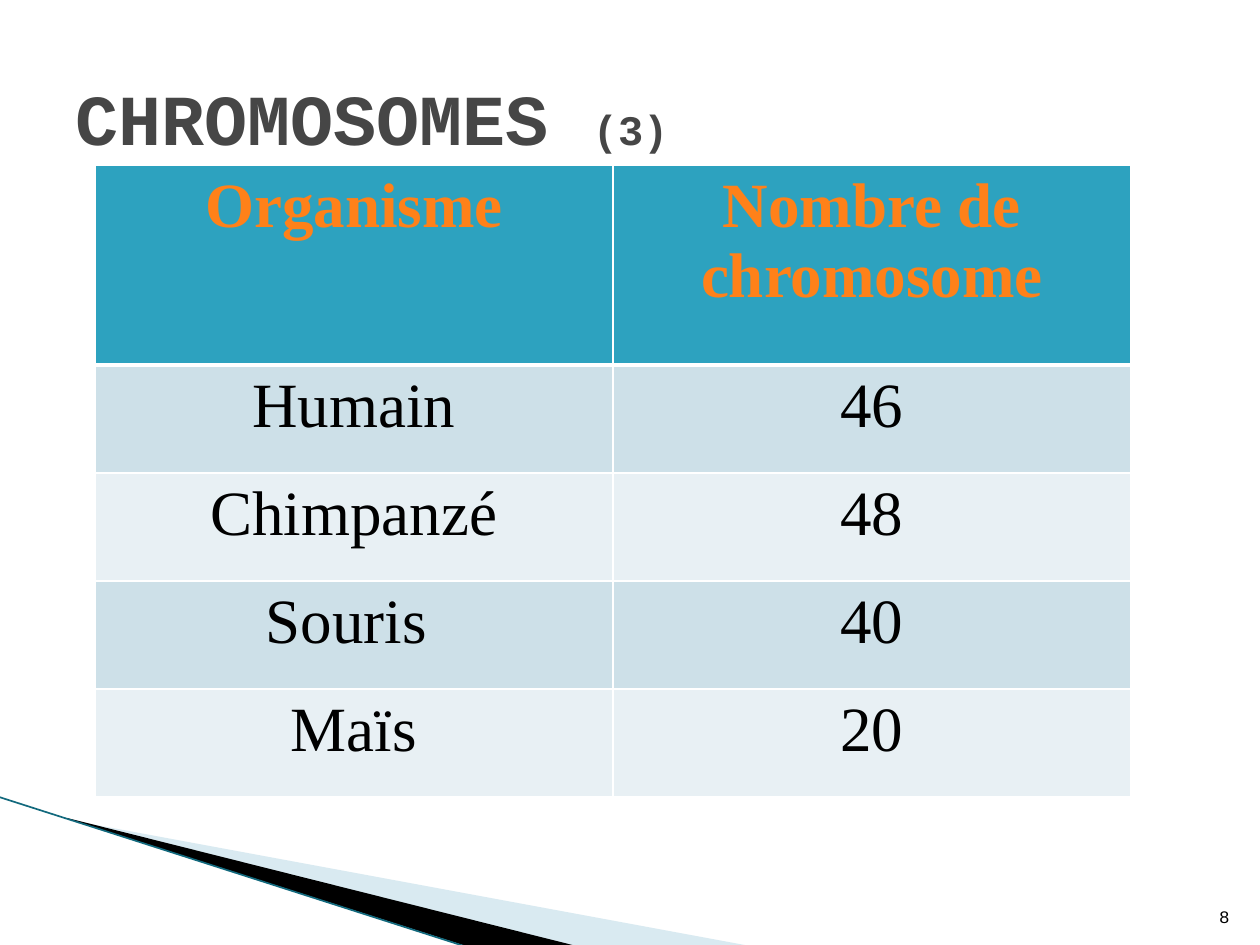
"""Build the chromosome count slide with its table and corner wedges."""
from lxml import etree
from pptx import Presentation
from pptx import util as u
from pptx.dml.color import RGBColor
from pptx.enum import shapes, text
from pptx.oxml import ns

TITLE = [("CHROMOSOMES ", 41), ("(3)", 24)]
ROWS = [
    ("Organisme", "Nombre de chromosome"),
    ("Humain", "46"),
    ("Chimpanzé", "48"),
    ("Souris ", "40"),
    ("Maïs", "20"),
]
WEDGES = [
    ([(69, 820), (750, 946), (575, 946), (69, 819)], "A0CBDC", 40),
    ([(67, 818), (576, 946), (469, 947), (68, 819)], "000000", 100),
]
EDGE = (-1, 797, 467, 947)
HEADER_HEIGHT, ROW_HEIGHT, COLUMN_WIDTH = 200, 108, 518
HEADER_FILL, BAND_FILLS = "2DA2BF", ("E8F0F4", "CDE0E8")
SCALE = 914400 / 126


def px(*lengths):
    return [u.Emu(round(length * SCALE)) for length in lengths]


def color(value):
    return RGBColor.from_string(value)


def add_span(para, words, size, font, fill, bold=False):
    span = para.add_run()
    span.text = words
    span.font.size = u.Pt(size)
    span.font.name = font
    span.font.bold = bold
    span.font.color.rgb = color(fill)


def add_wedge(page, points, fill, opacity):
    builder = page.shapes.build_freeform(*points[0], scale=SCALE)
    builder.add_line_segments(points[1:], close=True)
    wedge = builder.convert_to_shape()
    wedge.shadow.inherit = False
    wedge.line.fill.background()
    wedge.fill.solid()
    wedge.fill.fore_color.rgb = color(fill)
    if opacity < 100:
        tint = wedge.fill._xPr.find(".//" + ns.qn("a:srgbClr"))
        etree.SubElement(tint, ns.qn("a:alpha")).set("val", str(opacity * 1000))


def add_borders(cell, bottom):
    properties = cell._tc.get_or_add_tcPr()
    for side, width in (("L", 1), ("R", 1), ("T", 1), ("B", bottom)):
        line = etree.SubElement(properties, ns.qn(f"a:ln{side}"), w=str(u.Pt(width)))
        solid = etree.SubElement(line, ns.qn("a:solidFill"))
        etree.SubElement(solid, ns.qn("a:srgbClr"), val="FFFFFF")


def add_counts(page):
    height = HEADER_HEIGHT + ROW_HEIGHT * (len(ROWS) - 1)
    frame = px(95, 165, 2 * COLUMN_WIDTH, height)
    table = page.shapes.add_table(len(ROWS), 2, *frame).table
    for column in table.columns:
        column.width = px(COLUMN_WIDTH)[0]
    for r, row in enumerate(ROWS):
        header = r == 0
        table.rows[r].height = px(HEADER_HEIGHT if header else ROW_HEIGHT)[0]
        for c, words in enumerate(row):
            cell = table.cell(r, c)
            add_borders(cell, 3 if header else 1)
            cell.fill.solid()
            cell.fill.fore_color.rgb = color(HEADER_FILL if header else BAND_FILLS[r % 2])
            para = cell.text_frame.paragraphs[0]
            para.alignment = text.PP_ALIGN.CENTER
            ink = "FF8119" if header else "000000"
            add_span(para, words, 36, "Times New Roman", ink, header)


def main():
    deck = Presentation()
    deck.slide_width, deck.slide_height = px(1260, 945)
    page = deck.slides.add_slide(deck.slide_layouts[5])

    for wedge in WEDGES:
        add_wedge(page, *wedge)
    edge = page.shapes.add_connector(shapes.MSO_CONNECTOR.STRAIGHT, *px(*EDGE))
    edge.line.color.rgb = color("12697D")
    edge.line.width = u.Pt(0.95)
    etree.SubElement(edge._element.spPr, ns.qn("a:effectLst"))

    add_counts(page)

    title = page.shapes.title
    title.left, title.top, title.width, title.height = px(63, 38, 1134, 157)
    title.text_frame.vertical_anchor = text.MSO_ANCHOR.MIDDLE
    para = title.text_frame.paragraphs[0]
    para.alignment = text.PP_ALIGN.LEFT
    for words, size in TITLE:
        add_span(para, words, size, "Courier New", "464646", True)

    box = page.shapes.add_textbox(*px(1192, 883, 50, 50)).text_frame
    box.word_wrap = True
    box.vertical_anchor = text.MSO_ANCHOR.BOTTOM
    para = box.paragraphs[0]
    para.alignment = text.PP_ALIGN.RIGHT
    add_span(para, "8", 10, "Courier New", "000000")

    deck.save("out.pptx")


if __name__ == "__main__":
    main()
